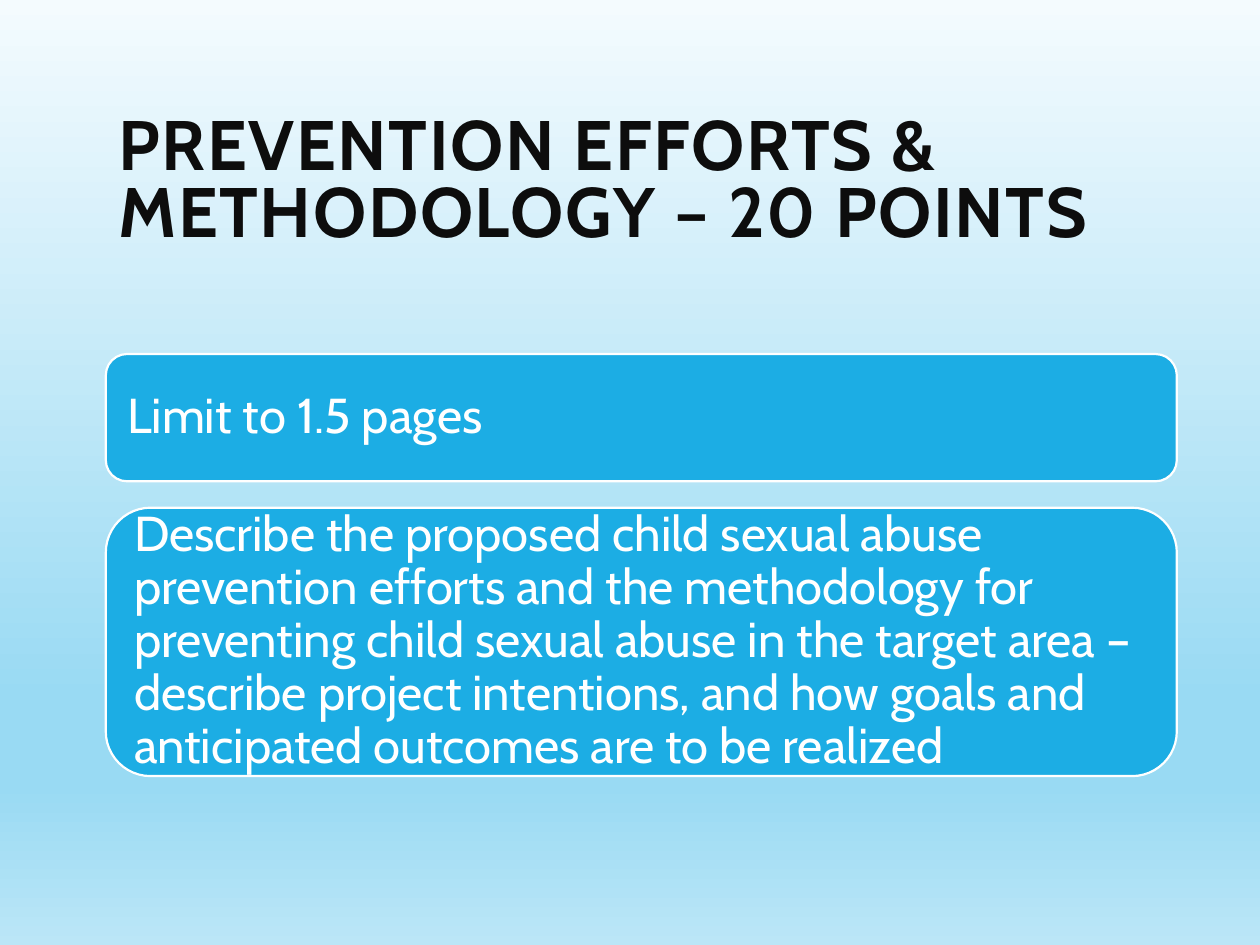
from lxml import etree
from pptx import Presentation
from pptx.dml.color import RGBColor
from pptx.enum.shapes import MSO_SHAPE
from pptx.enum.text import MSO_ANCHOR, MSO_AUTO_SIZE, PP_ALIGN
from pptx.oxml.ns import qn
from pptx.util import Inches, Pt

ROUNDED = MSO_SHAPE.ROUNDED_RECTANGLE
MIDDLE = MSO_ANCHOR.MIDDLE
NO_FIT = MSO_AUTO_SIZE.NONE
LEFT = PP_ALIGN.LEFT

FONT = "Cabin"
MARGIN = 0.84
STOPS = [(0, "F4FBFE"), (74, "99DAF3"), (83, "99DAF3"), (100, "BBE6F7")]
TITLE = "PREVENTION EFFORTS & METHODOLOGY – 20 POINTS"
CARDS = [
    ("Limit to 1.5 pages", 1.01),
    ("Describe the proposed child sexual abuse prevention efforts and the "
     "methodology for preventing child sexual abuse in the target area – "
     "describe project intentions, and how goals and anticipated outcomes "
     "are to be realized", 2.13),
]


def color(value):
    return RGBColor.from_string(value)


def write(tf, text, size, value, spacing, bold=False):
    tf.word_wrap = True
    tf.auto_size = NO_FIT
    tf.vertical_anchor = MIDDLE
    p = tf.paragraphs[0]
    p.alignment = LEFT
    p.line_spacing = spacing
    r = p.add_run()
    r.text = text
    r.font.name = FONT
    r.font.size = Pt(size)
    r.font.bold = bold
    r.font.color.rgb = color(value)
    return r


def paint_background(s):
    fill = s.background.fill
    fill.gradient()
    grad = s.background._cSld.find(".//" + qn("a:gradFill"))
    stops = grad.find(qn("a:gsLst"))
    for gs in list(stops):
        stops.remove(gs)
    for share, value in STOPS:
        gs = etree.SubElement(stops, qn("a:gs"), pos=str(share * 1000))
        etree.SubElement(gs, qn("a:srgbClr"), val=value)
    grad.find(qn("a:lin")).set("ang", str(90 * 60000))


def add_title(s, x, y, w, h):
    sp = s.shapes.title
    sp.left, sp.top, sp.width, sp.height = map(Inches, (x, y, w, h))
    r = write(sp.text_frame, TITLE, 40, "0D0D0D", 0.8, bold=True)
    r.font._element.set("spc", "100")  # letter spacing of 1 pt


def add_cards(s, x, y, w, gap):
    for text, h in CARDS:
        sp = s.shapes.add_shape(ROUNDED, *map(Inches, (x, y, w, h)))
        sp.shadow.inherit = False
        sp.fill.solid()
        sp.fill.fore_color.rgb = color("1CADE4")
        sp.line.color.rgb = color("FFFFFF")
        sp.line.width = Pt(1.25)
        tf = sp.text_frame
        tf.margin_left = tf.margin_right = Inches(0.12)
        tf.margin_top = tf.margin_bottom = Inches(0.12)
        write(tf, text, 28, "FFFFFF", 0.9)
        y += h + gap


def main():
    prs = Presentation()
    prs.slide_width, prs.slide_height = Inches(10), Inches(7.5)
    s = prs.slides.add_slide(prs.slide_layouts[5])  # title only
    paint_background(s)
    add_title(s, MARGIN, 0.64, 7.97, 1.64)
    add_cards(s, MARGIN, 2.81, 8.5, gap=0.21)
    prs.save("out.pptx")


if __name__ == "__main__":
    main()
